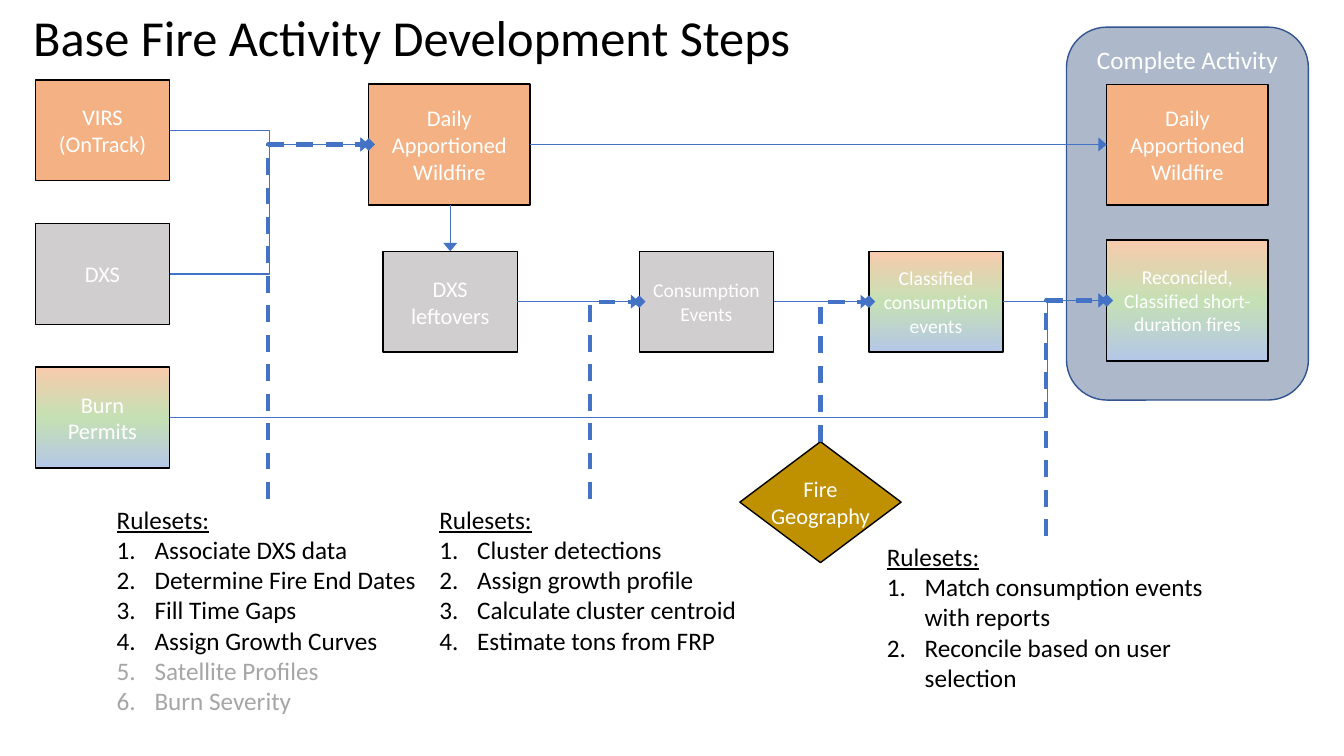
from copy import deepcopy

from lxml import etree
from pptx import Presentation
from pptx.dml.color import RGBColor
from pptx.enum.dml import MSO_LINE
from pptx.enum.shapes import MSO_CONNECTOR, MSO_SHAPE
from pptx.enum.text import MSO_ANCHOR, MSO_AUTO_SIZE, PP_ALIGN
from pptx.oxml.ns import qn
from pptx.util import Pt

RECTANGLE, ROUNDED, DIAMOND = MSO_SHAPE.RECTANGLE, MSO_SHAPE.ROUNDED_RECTANGLE, MSO_SHAPE.DIAMOND
ELBOW, STRAIGHT = MSO_CONNECTOR.ELBOW, MSO_CONNECTOR.STRAIGHT
DASH = MSO_LINE.DASH
TOP, MIDDLE = MSO_ANCHOR.TOP, MSO_ANCHOR.MIDDLE
CENTER = PP_ALIGN.CENTER
FIT_SHAPE = MSO_AUTO_SIZE.SHAPE_TO_FIT_TEXT

BLACK = RGBColor(0x00, 0x00, 0x00)
WHITE = RGBColor(0xFF, 0xFF, 0xFF)
FADED = RGBColor(0xA6, 0xA6, 0xA6)
BLUE = RGBColor(0x44, 0x72, 0xC4)
NAVY = RGBColor(0x32, 0x54, 0x91)
SLATE = RGBColor(0xAD, 0xB9, 0xCA)
ORANGE = RGBColor(0xF4, 0xB1, 0x83)
GRAY = RGBColor(0xD0, 0xCE, 0xCE)
GOLD = RGBColor(0xBF, 0x90, 0x00)
MIXED = [RGBColor(0xF8, 0xCB, 0xAD), RGBColor(0xC5, 0xE0, 0xB4), RGBColor(0xB4, 0xC7, 0xE7)]


def write(para, text, size, color):
    """Put text in a paragraph and give its runs and line breaks one font."""
    para.text = text
    for span in para.runs:
        span.font.name = "Calibri"
        span.font.size = Pt(size)
        span.font.color.rgb = color
    run_properties = para._p.find(qn("a:r")).find(qn("a:rPr"))
    for line_break in para._p.findall(qn("a:br")):
        line_break.append(deepcopy(run_properties))


def finish_connector(connector, width, arrowhead, head_width):
    connector.line.color.rgb = BLUE
    connector.line.width = Pt(width)
    tail = etree.SubElement(connector.line._get_or_add_ln(), qn("a:tailEnd"))
    tail.set("type", arrowhead)
    tail.set("w", head_width)
    etree.SubElement(connector._element.spPr, qn("a:effectLst"))


deck = Presentation()
deck.slide_width, deck.slide_height = Pt(960), Pt(540)
page = deck.slides.add_slide(deck.slide_layouts[6])

# Boxes: shape, left, top, width, height, fill, text, size, wraps
SMALL = (96, 72)
LARGE = (115.2, 86.4)
SOURCE_LEFT, SOURCE_TOP, SOURCE_STEP = 25.2, 57.1, 102.6
CHAIN_TOP = 179.5
WILDFIRE = "Daily Apportioned Wildfire"
boxes = [
    (ROUNDED, 761.8, 19.4, 172.8, 266.4, SLATE, "Complete Activity", 18, True),
    (RECTANGLE, 790.6, 171.4, *LARGE, MIXED, "Reconciled, Classified short-duration fires", 14, True),
    (RECTANGLE, 790.6, 60.2, *LARGE, ORANGE, WILDFIRE, 16, True),
    (RECTANGLE, 263.4, 60, *LARGE, ORANGE, WILDFIRE, 16, True),
    (RECTANGLE, 273.6, CHAIN_TOP, *SMALL, GRAY, "DXS\nleftovers", 16, False),
    (RECTANGLE, 456.6, CHAIN_TOP, *SMALL, GRAY, "Consumption Events", 14, True),
    (RECTANGLE, 620.6, CHAIN_TOP, *SMALL, MIXED, "Classified consumption events", 14, True),
    (DIAMOND, 528.5, 315.5, *LARGE, GOLD, "Fire\nGeography", 16, False),
]
sources = [("VIRS\n(OnTrack)", ORANGE), ("DXS", GRAY), ("Burn\nPermits", MIXED)]
for row, (text, fill) in enumerate(sources):
    top = SOURCE_TOP + row * SOURCE_STEP
    boxes.append((RECTANGLE, SOURCE_LEFT, top, *SMALL, fill, text, 16, False))

for kind, left, top, width, height, fill, text, size, wraps in boxes:
    box = page.shapes.add_shape(kind, Pt(left), Pt(top), Pt(width), Pt(height))
    box.shadow.inherit = False
    if fill is MIXED:
        box.fill.gradient()
        box.fill.gradient_angle = 270
        stop_list = box._element.spPr.find(".//" + qn("a:gsLst"))
        stop_list.append(deepcopy(stop_list[0]))
        for index, stop in enumerate(box.fill.gradient_stops):
            stop.position = index / 2
            stop.color.rgb = MIXED[index]
    else:
        box.fill.solid()
        box.fill.fore_color.rgb = fill
    box.line.color.rgb = NAVY if kind == ROUNDED else BLACK
    box.line.width = Pt(1)
    frame = box.text_frame
    frame.word_wrap = wraps
    frame.vertical_anchor = TOP if kind == ROUNDED else MIDDLE
    write(frame.paragraphs[0], text, size, WHITE)
    frame.paragraphs[0].alignment = CENTER

# Dashed rule links rise from the rulesets, then turn right into a step
WILDFIRE_Y, CHAIN_Y, RECONCILED_Y = 103.2, 215.5, 214.6
rule_links = [
    (191.5, 356.4, 263.4, WILDFIRE_Y),
    (421.2, 356.4, 456.6, CHAIN_Y),
    (586.1, 315.5, 620.6, CHAIN_Y),
    (747.4, 383, 790.6, RECONCILED_Y),
]
for start_x, start_y, end_x, end_y in rule_links:
    middle_x, middle_y = (start_x + end_x) / 2, (start_y + end_y) / 2
    half_rise, half_run = (start_y - end_y) / 2, (end_x - start_x) / 2
    link = page.shapes.add_connector(
        ELBOW, Pt(middle_x + half_rise), Pt(middle_y + half_run),
        Pt(middle_x - half_rise), Pt(middle_y - half_run))
    link._element.spPr.find(qn("a:xfrm")).set("rot", "5400000")
    link._element.spPr.find(qn("a:prstGeom")).set("prst", "bentConnector2")
    link.line.dash_style = DASH
    finish_connector(link, 3, "diamond", "med")

# Solid flow arrows: start, end, share of the width before the bend
SOURCE_RIGHT = 121.4
flows = [
    (SOURCE_RIGHT, 93.1, 263.4, WILDFIRE_Y, 0.5),
    (SOURCE_RIGHT, 195.7, 263.4, WILDFIRE_Y, 0.5),
    (SOURCE_RIGHT, 298.3, 790.6, RECONCILED_Y, 0.937),
    (369.6, CHAIN_Y, 456.6, CHAIN_Y, 0.5),
    (552.6, CHAIN_Y, 620.6, CHAIN_Y, 0.5),
    (716.6, CHAIN_Y, 790.6, RECONCILED_Y, 0.5),
    (378.6, WILDFIRE_Y, 790.6, WILDFIRE_Y, 0.5),
    (321.6, 146.4, 321.6, CHAIN_TOP, 0.5),
]
for start_x, start_y, end_x, end_y, bend in flows:
    kind = STRAIGHT if start_x == end_x else ELBOW
    flow = page.shapes.add_connector(kind, Pt(start_x), Pt(start_y), Pt(end_x), Pt(end_y))
    if bend != 0.5:
        adjustments = flow._element.spPr.find(qn("a:prstGeom")).find(qn("a:avLst"))
        guide = etree.SubElement(adjustments, qn("a:gd"))
        guide.set("name", "adj1")
        guide.set("fmla", f"val {round(bend * 100000)}")
    finish_connector(flow, 1, "triangle", "lg")

# Rulesets: left, top, width, height, rules, number of rules in force
rulesets = [
    (76.3, 356.4, 230.4, 159.8,
     ["Associate DXS data", "Determine Fire End Dates", "Fill Time Gaps",
      "Assign Growth Curves", "Satellite Profiles", "Burn Severity"], 4),
    (306.7, 356.4, 229, 116.6,
     ["Cluster detections", "Assign growth profile",
      "Calculate cluster centroid", "Estimate tons from FRP"], 4),
    (626.4, 383, 242.6, 116.6,
     ["Match consumption events\nwith reports", "Reconcile based on user\nselection"], 2),
]
for left, top, width, height, rules, active in rulesets:
    frame = page.shapes.add_textbox(Pt(left), Pt(top), Pt(width), Pt(height)).text_frame
    frame.word_wrap = False
    frame.auto_size = FIT_SHAPE
    write(frame.paragraphs[0], "Rulesets:", 18, BLACK)
    frame.paragraphs[0].runs[0].font.underline = True
    for index, rule in enumerate(rules):
        para = frame.add_paragraph()
        write(para, rule, 18, BLACK if index < active else FADED)
        properties = para._p.get_or_add_pPr()
        properties.set("marL", str(Pt(27)))
        properties.set("indent", str(-Pt(27)))
        etree.SubElement(properties, qn("a:buFont")).set("typeface", "+mj-lt")
        etree.SubElement(properties, qn("a:buAutoNum")).set("type", "arabicPeriod")

title = page.shapes.add_textbox(Pt(16.6), Pt(5.8), Pt(828), Pt(104.4)).text_frame
title.word_wrap = True
write(title.paragraphs[0], "Base Fire Activity Development Steps", 36, BLACK)
title.paragraphs[0].line_spacing = 0.9

deck.save("out.pptx")
